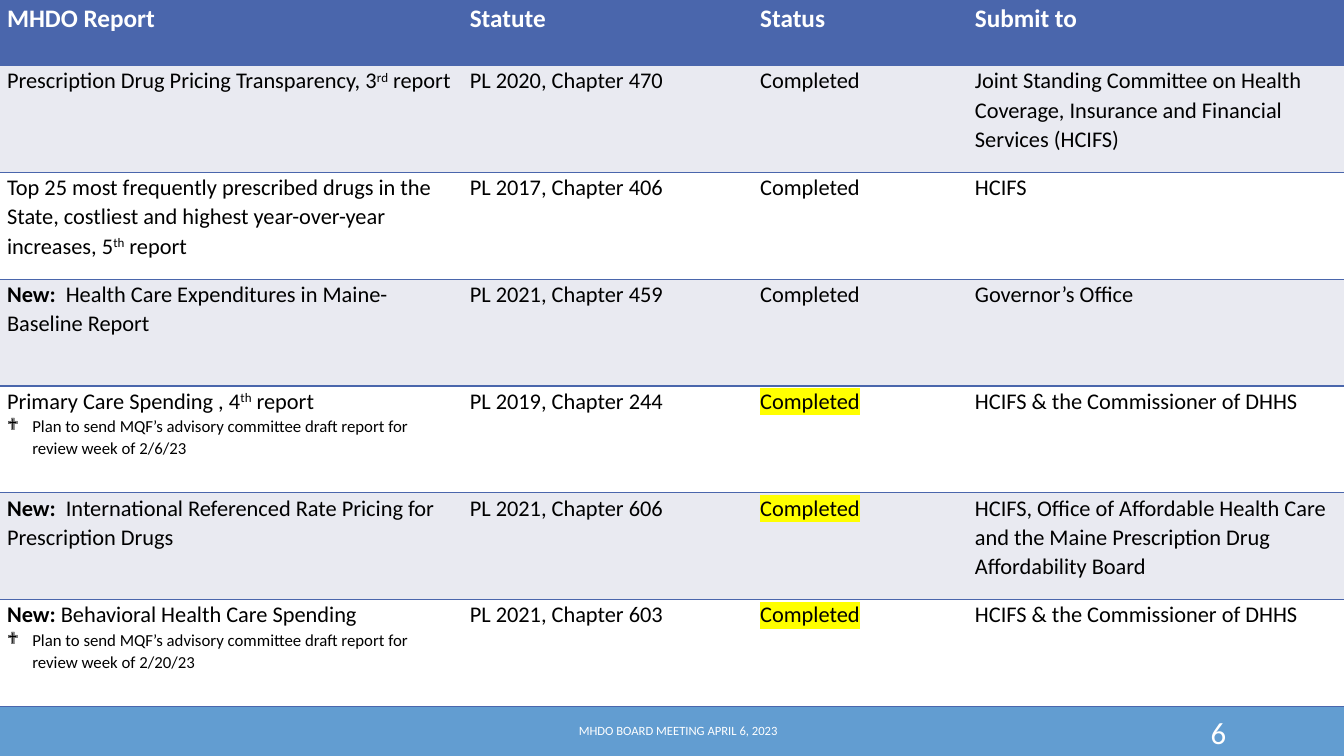
import pptx
import pptx.util
import pptx.dml.color
import pptx.enum.shapes
import pptx.enum.text
import pptx.oxml
import pptx.oxml.ns
from dataclasses import dataclass

Inches, Pt = pptx.util.Inches, pptx.util.Pt
ALIGN = pptx.enum.text.PP_ALIGN

# Content: each report is a list of (text, style) runs, then an optional note
HEADERS = ["MHDO Report", "Statute", "Status", "Submit to"]
REPORTS = [
    ([("Prescription Drug Pricing Transparency, 3", ""), ("rd", "super"), (" report", "")], None,
     "PL 2020, Chapter 470", "",
     "Joint Standing Committee on Health Coverage, Insurance and Financial Services (HCIFS)"),
    ([("Top 25 most frequently prescribed drugs in the State, costliest and highest "
       "year-over-year increases, 5", ""), ("th", "super"), (" report", "")], None,
     "PL 2017, Chapter 406", "", "HCIFS"),
    ([("New:  ", "bold"), ("Health Care Expenditures in Maine-Baseline Report", "")], None,
     "PL 2021, Chapter 459", "", "Governor’s Office"),
    ([("Primary Care Spending , 4", ""), ("th", "super"), (" report", "")],
     "Plan to send MQF’s advisory committee draft report for review week of 2/6/23",
     "PL 2019, Chapter 244", "highlight", "HCIFS & the Commissioner of DHHS"),
    ([("New:  ", "bold"), ("International Referenced Rate Pricing for Prescription Drugs", "")], None,
     "PL 2021, Chapter 606", "highlight",
     "HCIFS, Office of Affordable Health Care and the Maine Prescription Drug Affordability Board"),
    ([("New: ", "bold"), ("Behavioral Health Care Spending", "")],
     "Plan to send MQF’s advisory committee draft report for review week of 2/20/23",
     "PL 2021, Chapter 603", "highlight", "HCIFS & the Commissioner of DHHS"),
]
STATUS = "Completed"
FOOTER = "MHDO BOARD MEETING APRIL 6, 2023"
PAGE = "6"

# Layout, in inches
COLUMNS = [4.59, 2.88, 2.13, 3.75]
HEADER_HEIGHT, ROW_HEIGHT = 0.64, 1.06
INSET, INDENT = 0.08, 0.25


@dataclass(frozen=True)
class Theme:
    font: str = "Calibri"
    header: str = "4A66AC"
    band: str = "E9EAF1"
    white: str = "FFFFFF"
    text: str = "000000"
    footer: str = "629DD1"
    highlight: str = "FFFF00"
    header_size: int = 18
    body_size: int = 16
    note_size: int = 12
    footer_size: int = 9
    page_size: int = 22


T = Theme()


def rgb(color):
    return pptx.dml.color.RGBColor.from_string(color)


def element(tag, content="", attrs=""):
    ns = pptx.oxml.ns.nsdecls("a")
    return pptx.oxml.parse_xml(f"<a:{tag} {ns} {attrs}>{content}</a:{tag}>")


def add_run(p, text, size, color, style=""):
    r = p.add_run()
    r.text = text
    r.font.name, r.font.size, r.font.bold = T.font, Pt(size), style == "bold"
    r.font.color.rgb = rgb(color)
    rpr = r.font._element
    if style == "super":
        rpr.set("baseline", "30000")
    if style == "highlight":
        mark = element("highlight", f'<a:srgbClr val="{T.highlight}"/>')
        rpr.find(pptx.oxml.ns.qn("a:solidFill")).addnext(mark)


def add_note(tf, text):
    p = tf.add_paragraph()
    p.line_spacing = 1.07
    ppr = p._p.get_or_add_pPr()
    ppr.set("marL", str(Inches(INDENT)))
    ppr.set("indent", str(-Inches(INDENT)))
    ppr.append(element("buFont", attrs='typeface="Wingdings"'))
    ppr.append(element("buChar", attrs='char="❖"'))
    add_run(p, text, T.note_size, T.text)


def set_borders(cell, sides):
    tcpr = cell._tc.get_or_add_tcPr()
    line = f'<a:solidFill><a:srgbClr val="{T.header}"/></a:solidFill>'
    for i, side in enumerate("LRTB"):
        fill = line if side in sides else "<a:noFill/>"
        tcpr.insert(i, element(f"ln{side}", fill, f'w="{Pt(1)}"'))


def fill_cell(cell, runs, size, color, fill, note=None):
    cell.margin_left = cell.margin_right = Inches(INSET)
    cell.margin_top = cell.margin_bottom = 0
    cell.fill.solid()
    cell.fill.fore_color.rgb = rgb(fill)
    p = cell.text_frame.paragraphs[0]
    p.line_spacing = 1.07
    for text, style in runs:
        add_run(p, text, size, color, style)
    if note:
        add_note(cell.text_frame, note)


def add_label(slide, box, text, size, align):
    tf = slide.shapes.add_textbox(*map(Inches, box)).text_frame
    tf.word_wrap = True
    tf.vertical_anchor = pptx.enum.text.MSO_ANCHOR.MIDDLE
    p = tf.paragraphs[0]
    p.alignment = align
    add_run(p, text, size, T.white)


def add_report_table(slide):
    height = HEADER_HEIGHT + ROW_HEIGHT * len(REPORTS)
    table = slide.shapes.add_table(
        len(REPORTS) + 1, len(COLUMNS), Inches(-0.01), Inches(0.01),
        Inches(sum(COLUMNS)), Inches(height)).table
    for column, width in zip(table.columns, COLUMNS):
        column.width = Inches(width)
    for i, row in enumerate(table.rows):
        row.height = Inches(ROW_HEIGHT if i else HEADER_HEIGHT)

    for cell, header in zip(table.rows[0].cells, HEADERS):
        fill_cell(cell, [(header, "bold")], T.header_size, T.white, T.header)
    for i, (report, note, statute, status_style, recipient) in enumerate(REPORTS, 1):
        columns = [report, [(statute, "")], [(STATUS, status_style)], [(recipient, "")]]
        for j, runs in enumerate(columns):
            fill_cell(table.cell(i, j), runs, T.body_size, T.text,
                      T.band if i % 2 else T.white, note if j == 0 else None)

    # Row rules everywhere, vertical rules only on the outer edges
    for row in table.rows:
        for j, cell in enumerate(row.cells):
            outer = {0: "L", len(COLUMNS) - 1: "R"}.get(j, "")
            set_borders(cell, "TB" + outer)


def main():
    prs = pptx.Presentation()
    prs.slide_width, prs.slide_height = Inches(13.33), Inches(7.5)
    slide = prs.slides.add_slide(prs.slide_layouts[6])

    # Footer band
    band = slide.shapes.add_shape(pptx.enum.shapes.MSO_SHAPE.RECTANGLE,
                                  0, Inches(7), prs.slide_width, Inches(0.5))
    band.shadow.inherit = False
    band.fill.solid()
    band.fill.fore_color.rgb = rgb(T.footer)
    band.line.fill.background()

    add_report_table(slide)

    # Footer text and page number
    add_label(slide, (4.09, 7, 5.27, 0.49), FOOTER, T.footer_size, ALIGN.CENTER)
    add_label(slide, (10.83, 7.06, 1.43, 0.4), PAGE, T.page_size, ALIGN.RIGHT)
    prs.save("out.pptx")


if __name__ == "__main__":
    main()
